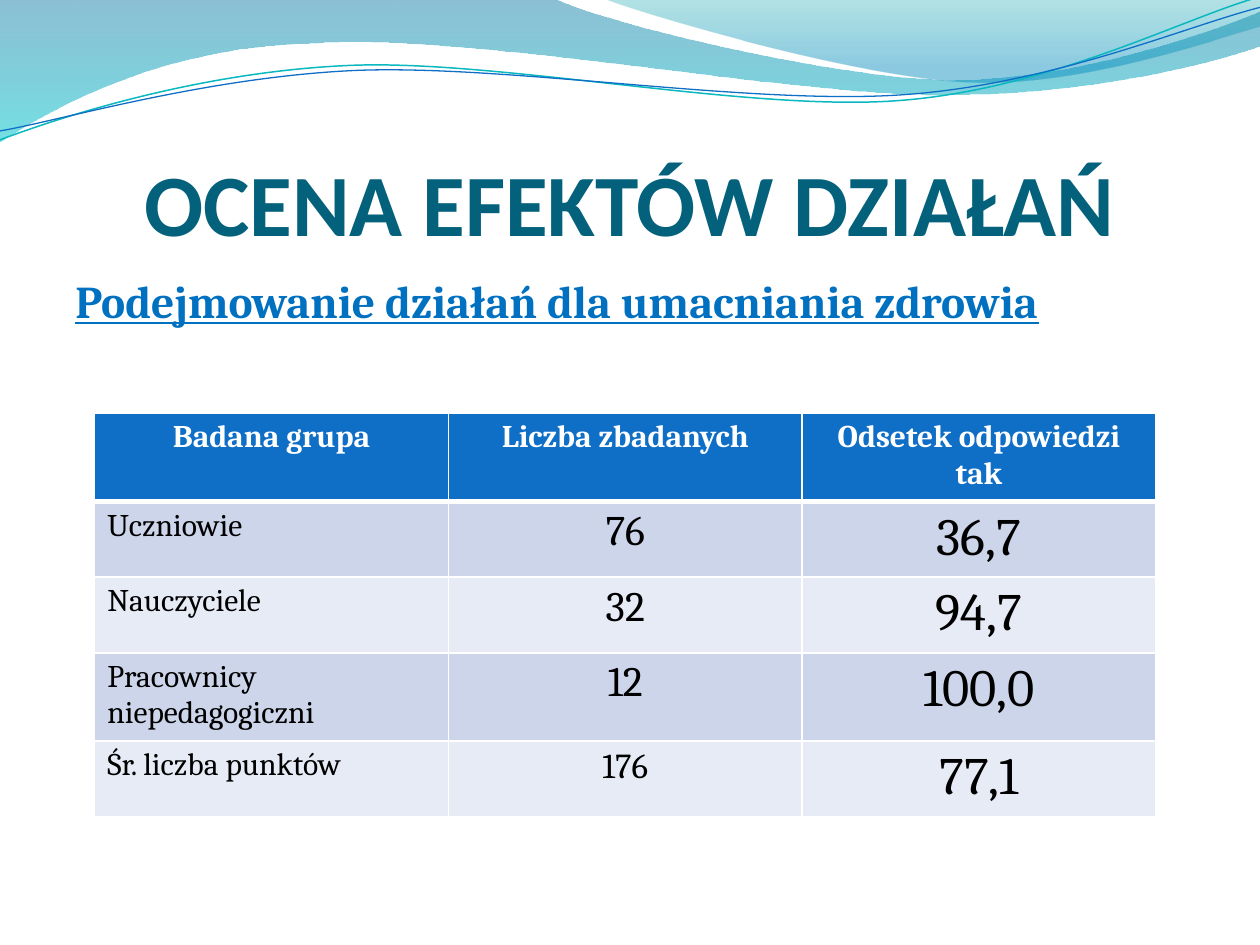
"""Build a slide with a wave header and a table of survey results."""
from lxml.etree import SubElement
from pptx import Presentation
from pptx.dml.color import RGBColor
from pptx.enum.text import MSO_ANCHOR as Anchor, PP_ALIGN as Align
from pptx.oxml.ns import qn
from pptx.util import Cm, Pt

WHITE = RGBColor(0xFF, 0xFF, 0xFF)
BLACK = RGBColor(0x00, 0x00, 0x00)
TITLE_TEAL = RGBColor(0x04, 0x61, 0x7B)
HEADING_BLUE = RGBColor(0x00, 0x70, 0xC0)
HEADER_BLUE = RGBColor(0x0F, 0x6F, 0xC6)
LINE_TEAL = RGBColor(0x0A, 0xB8, 0xBF)
BANDS = (RGBColor(0xCC, 0xD5, 0xEA), RGBColor(0xE7, 0xEB, 0xF5))
DEEP_BLUE = RGBColor(0x00, 0x74, 0xA1)
AQUA = RGBColor(0x00, 0xC6, 0xCF)
GREEN_TEAL = RGBColor(0x00, 0xA1, 0xA9)
SKY = RGBColor(0x00, 0x8B, 0xBF)

TITLE = "OCENA EFEKTÓW DZIAŁAŃ"
HEADING = "Podejmowanie działań dla umacniania zdrowia"
HEADERS = ("Badana grupa", "Liczba zbadanych", "Odsetek odpowiedzi tak")
RESULTS = (
    ("Uczniowie", "76", "36,7"),
    ("Nauczyciele", "32", "94,7"),
    ("Pracownicy niepedagogiczni", "12", "100,0"),
    ("Śr. liczba punktów", "176", "77,1"),
)
ROW_HEIGHT = 1.04
TABLE_HEIGHT = 8.13
COLUMN_WIDTH = 7.13
COLUMN_SIZES = (18, 24, 30)
LAST_ROW_SIZES = (18, 20, 30)
HEADER_BORDERS = {"a:lnL": 1, "a:lnR": 1, "a:lnT": 1, "a:lnB": 3}

WAVES = (
    {
        "steps": (
            ((0, 0),),
            ((11.18, -0.03),),
            ((12.09, 0.43), (16.87, 1.6), (19.25, 1.6)),
            ((21.67, 1.6), (24.33, 0.66), (25.4, 0.23)),
            ((25.43, 0.91),),
            ((24.97, 1.12), (22.1, 1.93), (18.95, 1.91)),
            ((15.8, 1.91), (9.7, 0.71), (6.53, 0.86)),
            ((3.28, 0.91), (1.17, 2.11), (-0.03, 2.87)),
        ),
        "stops": ((0, DEEP_BLUE, 45), (1, AQUA, 55)),
    },
    {
        "steps": (
            ((12.17, -0.03),),
            ((12.93, 0.28), (17.32, 1.57), (19.53, 1.65)),
            ((21.74, 1.75), (24.41, 0.81), (25.4, 0.53)),
            ((25.4, 0),),
        ),
        "stops": ((0, GREEN_TEAL, 30), (0.8, SKY, 45)),
    },
)
STRANDS = (
    {
        "steps": (
            ((0, 2.82),),
            ((1.22, 2.36), (4.01, 1.45), (7.04, 1.32)),
            ((10.03, 1.19), (15.06, 2.26), (18.11, 2.03)),
            ((21.16, 1.8), (23.83, 0.38), (25.35, -0.05)),
        ),
        "color": LINE_TEAL,
        "width": 0.85,
    },
    {
        "steps": (
            ((0, 2.64),),
            ((1.19, 2.44), (4.17, 1.55), (7.19, 1.42)),
            ((10.24, 1.3), (15.16, 2.13), (18.21, 1.91)),
            ((21.23, 1.7), (23.9, 0.53), (25.4, 0.15)),
        ),
        "color": HEADER_BLUE,
        "width": 0.75,
    },
)


def add_outline(slide, steps, close):
    """Draw an outline of straight and cubic steps."""
    start, *ends = [(Cm(step[-1][0]), Cm(step[-1][1])) for step in steps]
    builder = slide.shapes.build_freeform(*start)
    builder.add_line_segments(ends, close=close)
    outline = builder.convert_to_shape()
    outline.shadow.inherit = False
    segments = list(outline._element.spPr.iter(qn("a:lnTo")))
    for segment, step in zip(segments, steps[1:]):
        if len(step) == 1:
            continue
        segment.tag = qn("a:cubicBezTo")
        segment.remove(segment[0])
        for x, y in step:
            point = SubElement(segment, qn("a:pt"))
            point.set("x", str(Cm(x) - outline.left))
            point.set("y", str(Cm(y) - outline.top))
    return outline


def add_wave(slide, steps, stops):
    """Draw a filled wave with a see-through vertical gradient."""
    wave = add_outline(slide, steps, True)
    wave.line.fill.background()
    wave.fill.gradient()
    wave.fill.gradient_angle = 270
    for stop, (position, color, _) in zip(wave.fill.gradient_stops, stops):
        stop.position = position
        stop.color.rgb = color
    tints = wave._element.spPr.iter(qn("a:srgbClr"))
    for tint, (_, _, opacity) in zip(tints, stops):
        SubElement(tint, qn("a:alpha")).set("val", str(opacity * 1000))


def add_strand(slide, steps, color, width):
    """Draw a thin curved line."""
    strand = add_outline(slide, steps, False)
    strand.fill.background()
    strand.line.color.rgb = color
    strand.line.width = Pt(width)


def write(frame, text, color, align, size, **formats):
    """Put one formatted paragraph into a text frame."""
    paragraph = frame.paragraphs[0]
    paragraph.alignment = align
    run = paragraph.add_run()
    run.text = text
    run.font.color.rgb = color
    for key, value in {"name": "Cambria", "size": Pt(size), **formats}.items():
        setattr(run.font, key, value)


def add_text(slide, box, text, color, align, size, frame_formats, **formats):
    """Add a wrapped text box."""
    frame = slide.shapes.add_textbox(*map(Cm, box)).text_frame
    for key, value in {"word_wrap": True, **frame_formats}.items():
        setattr(frame, key, value)
    write(frame, text, color, align, size, **formats)


def add_borders(cell):
    """Give a header cell its white borders."""
    for side, width in HEADER_BORDERS.items():
        border = SubElement(cell._tc.get_or_add_tcPr(), qn(side))
        border.set("w", str(Pt(width)))
        fill = SubElement(border, qn("a:solidFill"))
        SubElement(fill, qn("a:srgbClr")).set("val", str(WHITE))


def add_results(slide):
    """Add the table of results."""
    rows = (HEADERS, *RESULTS)
    holder = slide.shapes.add_table(
        len(rows), len(HEADERS), Cm(1.91), Cm(8.33),
        Cm(COLUMN_WIDTH * len(HEADERS)), Cm(ROW_HEIGHT * len(rows)),
    )
    table = holder.table
    for r, values in enumerate(rows):
        header = r == 0
        sizes = LAST_ROW_SIZES if values is RESULTS[-1] else COLUMN_SIZES
        for c, value in enumerate(values):
            cell = table.cell(r, c)
            if header:
                add_borders(cell)
            cell.fill.solid()
            cell.fill.fore_color.rgb = HEADER_BLUE if header else BANDS[(r - 1) % 2]
            write(
                cell.text_frame, value, WHITE if header else BLACK,
                Align.CENTER if header or c else Align.LEFT,
                18 if header else sizes[c], bold=header,
            )
    holder.height = Cm(TABLE_HEIGHT)


def main():
    """Build and save the slide."""
    deck = Presentation()
    deck.slide_width, deck.slide_height = Cm(25.4), Cm(19.05)
    slide = deck.slides.add_slide(deck.slide_layouts[6])
    for wave in WAVES:
        add_wave(slide, **wave)
    for strand in STRANDS:
        add_strand(slide, **strand)
    title_frame = {
        "vertical_anchor": Anchor.BOTTOM, "margin_left": 0, "margin_right": 0,
        "margin_top": Cm(0.13), "margin_bottom": 0,
    }
    add_text(slide, (1.27, 1.95, 22.86, 3.18), TITLE, TITLE_TEAL, Align.CENTER, 50,
             title_frame, name="Calibri", bold=True)
    add_text(slide, (1.27, 5.38, 22.86, 12.19), HEADING, HEADING_BLUE, Align.LEFT, 26,
             {}, bold=True, underline=True)
    add_results(slide)
    deck.save("out.pptx")


if __name__ == "__main__":
    main()
